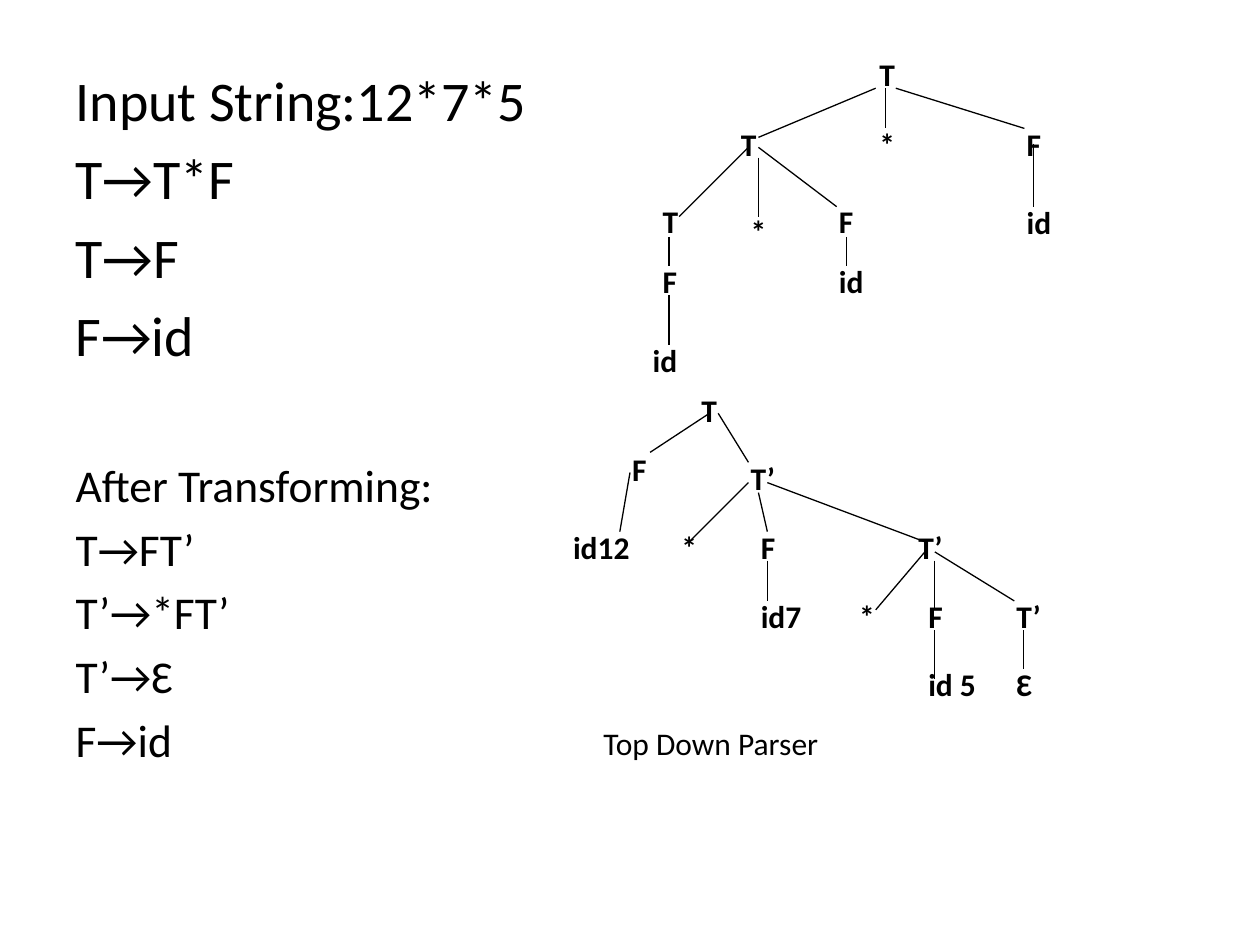
from dataclasses import dataclass

from lxml.etree import SubElement
from pptx import Presentation
from pptx.dml.color import RGBColor
from pptx.enum.shapes import MSO_CONNECTOR
from pptx.enum.text import MSO_AUTO_SIZE
from pptx.oxml.ns import qn
from pptx.util import Pt


@dataclass(frozen=True)
class Theme:
    """Colours and type sizes of the slide."""
    font: str = "Calibri"
    ink: RGBColor = RGBColor(0, 0, 0)
    grammar: int = 32
    transformed: int = 26
    label: int = 18
    line: float = 0.75


THEME = Theme()

GRAMMAR = ["Input String:12*7*5", "T→T*F", "T→F", "F→id"]
TRANSFORMED = ["After Transforming:", "T→FT’", "T’→*FT’", "T’→Ɛ", "F→id"]
SECTION_GAP = 51
LABEL_HEIGHT = 29
WIDE = 96

LEFT_RECURSIVE_NODES = [
    ("T", 495.4, 28.1, WIDE),
    ("T", 416.2, 67.7, WIDE), ("*", 495.4, 67.7, WIDE), ("F", 579.6, 67.7, WIDE),
    ("T", 371.5, 111.6, WIDE), ("*", 421.9, 117.4, WIDE),
    ("F", 472.3, 111.6, WIDE), ("id", 579.6, 112.3, WIDE),
    ("F", 371.5, 146.2, WIDE), ("id", 472.3, 146.2, WIDE),
    ("id", 365.8, 191.5, WIDE),
]
LEFT_RECURSIVE_EDGES = [
    (500.4, 50.4, 433.4, 78.5), (506.2, 50.4, 506.2, 73.4), (511.9, 50.4, 585.4, 73.4),
    (427.7, 84.2, 388.1, 123.8), (433.4, 90, 433.4, 123.8), (433.4, 84.2, 478.1, 118.1),
    (590.4, 82.1, 590.4, 118.1), (382.3, 135.4, 382.3, 151.9),
    (483.8, 135.4, 483.8, 151.9), (382.3, 168.5, 382.3, 197.3),
]

TOP_DOWN_NODES = [
    ("T", 393.8, 219.6, 45),
    ("F", 354.2, 253.4, 34), ("T’", 421.9, 258.5, 40),
    ("id12", 320.4, 298.1, 56), ("*", 382.3, 298.1, 34),
    ("F", 427.7, 298.1, 50), ("T’", 517.7, 298.1, 56),
    ("id7", 427.7, 337.7, 45), ("*", 483.8, 337.7, 34),
    ("F", 523.4, 337.7, 34), ("T’", 573.8, 337.7, 50),
    ("id 5", 523.4, 376.6, 50), ("Ɛ", 573.8, 376.6, 62),
]
TOP_DOWN_EDGES = [
    (405.4, 236.2, 371.5, 258.5), (410.4, 236.2, 427.7, 264.2),
    (360, 270, 354.2, 303.8), (427.7, 275.8, 393.8, 309.6),
    (433.4, 281.5, 438.5, 303.8), (438.5, 275.8, 528.5, 309.6),
    (438.5, 320.4, 438.5, 343.4), (528.5, 315.4, 500.4, 348.5),
    (534.2, 320.4, 534.2, 348.5), (534.2, 315.4, 579.6, 343.4),
    (534.2, 360, 534.2, 388.1), (585, 360, 585, 382.3),
]


def style(p, size, bold=False):
    """Set the font of a whole paragraph."""
    p.font.name, p.font.size, p.font.bold = THEME.font, Pt(size), bold
    p.font.color.rgb = THEME.ink


def add_grammar(slide):
    """Fill the body placeholder with both sets of productions."""
    sp = slide.placeholders[1]
    sp.left, sp.top, sp.width, sp.height = Pt(36), Pt(33.8), Pt(330), Pt(484)
    tf = sp.text_frame
    tf.text = "\n".join(GRAMMAR + TRANSFORMED)
    for i, p in enumerate(tf.paragraphs):
        style(p, THEME.grammar if i < len(GRAMMAR) else THEME.transformed)
        SubElement(p._p.get_or_add_pPr(), qn("a:buNone"))
    tf.paragraphs[len(GRAMMAR)].space_before = Pt(SECTION_GAP)


def add_label(slide, text, x, y, width, bold=True):
    """Add a one-line text box."""
    sp = slide.shapes.add_textbox(Pt(x), Pt(y), Pt(width), Pt(LABEL_HEIGHT))
    tf = sp.text_frame
    tf.word_wrap = True
    tf.auto_size = MSO_AUTO_SIZE.SHAPE_TO_FIT_TEXT
    p = tf.paragraphs[0]
    p.text = text
    style(p, THEME.label, bold)


def add_edge(slide, *ends):
    """Join two tree nodes with a thin line."""
    line = slide.shapes.add_connector(MSO_CONNECTOR.STRAIGHT, *map(Pt, ends))
    line.line.color.rgb = THEME.ink
    line.line.width = Pt(THEME.line)
    SubElement(line._element.spPr, qn("a:effectLst"))


def add_tree(slide, nodes, edges):
    """Draw a parse tree from its nodes and edges."""
    for node in nodes:
        add_label(slide, *node)
    for edge in edges:
        add_edge(slide, *edge)


def main():
    """Build the slide and save it."""
    prs = Presentation()
    prs.slide_width, prs.slide_height = Pt(720), Pt(540)
    slide = prs.slides.add_slide(prs.slide_layouts[1])
    title = slide.shapes.title._element
    title.getparent().remove(title)
    add_grammar(slide)
    add_tree(slide, LEFT_RECURSIVE_NODES, LEFT_RECURSIVE_EDGES)
    add_tree(slide, TOP_DOWN_NODES, TOP_DOWN_EDGES)
    add_label(slide, "Top Down Parser", 337.7, 410.4, 220, bold=False)
    prs.save("out.pptx")


if __name__ == "__main__":
    main()
